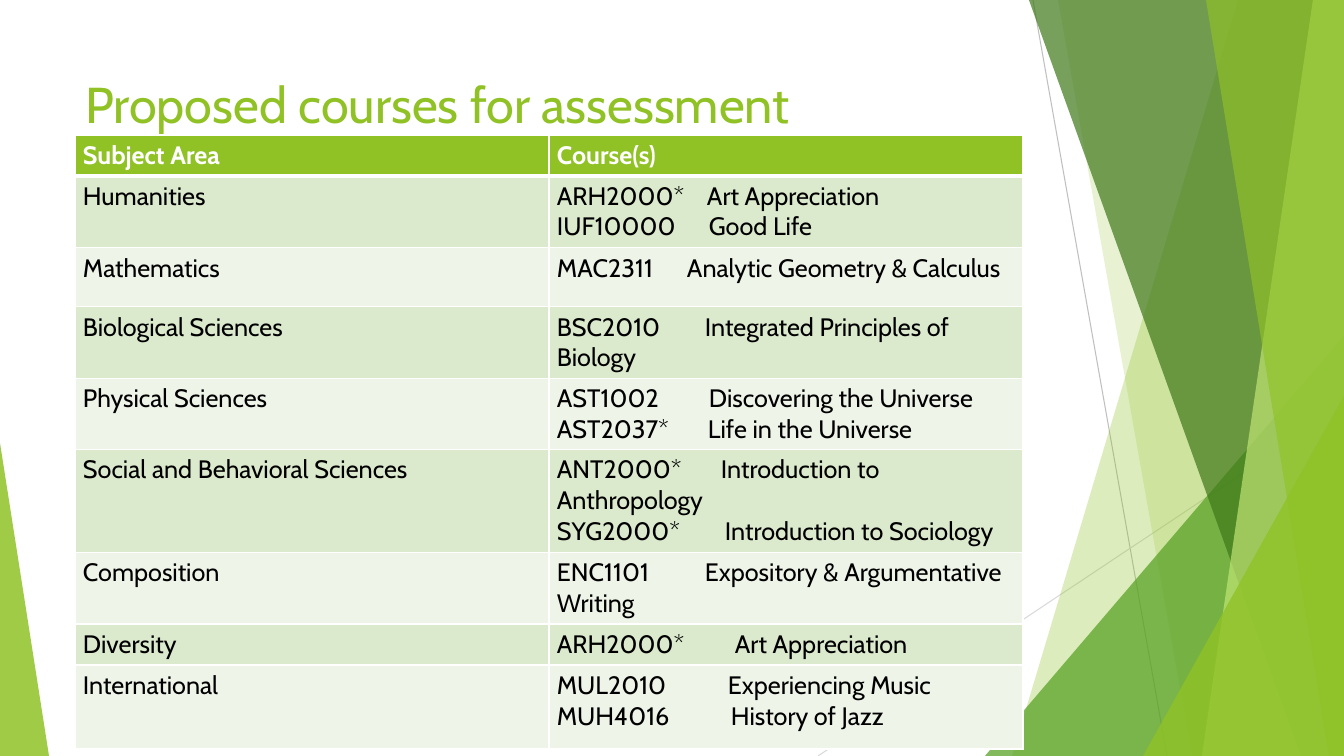
from dataclasses import dataclass

from lxml import etree
from pptx import Presentation
from pptx.dml.color import RGBColor
from pptx.enum.shapes import MSO_CONNECTOR, MSO_SHAPE
from pptx.enum.text import MSO_ANCHOR, PP_ALIGN
from pptx.oxml.ns import qn
from pptx.util import Pt

STRAIGHT = MSO_CONNECTOR.STRAIGHT
TRIANGLE = MSO_SHAPE.ISOSCELES_TRIANGLE
TOP = MSO_ANCHOR.TOP
LEFT = PP_ALIGN.LEFT

EMU_PER_PX = 914400 / 100.8
WIDTH, HEIGHT = 1344, 756
FONT = "Cabin"
GREEN, WHITE, BLACK = "90C226", "FFFFFF", "000000"
ROW_FILLS = ("DBE9CD", "EEF4E8")


@dataclass
class Ray:
    start: tuple[int, int]
    end: tuple[int, int]
    color: str


@dataclass
class Band:
    """A pane from a slanted left edge to the right side of the slide."""
    top_x: int
    bottom_x: int
    color: str
    opacity: int


@dataclass
class Wedge:
    """A right triangle standing on the bottom of the slide."""
    left: int
    top: int
    width: int
    apex: int
    color: str
    opacity: int


@dataclass
class Course:
    code: str
    name: str
    tab: int


@dataclass
class Subject:
    area: str
    courses: list[Course]
    height: int


RAYS = [
    Ray((1033, 0), (1167, HEIGHT), "BFBFBF"),
    Ray((WIDTH, 406), (818, HEIGHT), "D9D9D9"),
]
PANES = [
    Band(1238, 1012, GREEN, 30),
    Band(1058, 1192, GREEN, 20),
    Wedge(985, 336, 359, 1, "54A021", 72),
    Band(1029, 1301, "3F7819", 70),
    Band(1313, 1202, "C0E474", 70),
    Band(1206, 1329, GREEN, 65),
    Wedge(1143, 396, 201, 1, GREEN, 80),
    Wedge(0, 443, 49, 0, GREEN, 85),
]
HEADER_HEIGHT = 40
SUBJECTS = [
    Subject("Humanities", [Course("ARH2000*", "Art Appreciation", 150),
                           Course("IUF10000", "Good Life", 152)], 72),
    Subject("Mathematics", [Course("MAC2311", "Analytic Geometry & Calculus", 130)], 59),
    Subject("Biological Sciences",
            [Course("BSC2010", "Integrated Principles of Biology", 148)], 71),
    Subject("Physical Sciences", [Course("AST1002", "Discovering the Universe", 152),
                                  Course("AST2037*", "Life in the Universe", 151)], 71),
    Subject("Social and Behavioral Sciences",
            [Course("ANT2000*", "Introduction to Anthropology", 164),
             Course("SYG2000*", "Introduction to Sociology", 168)], 103),
    Subject("Composition",
            [Course("ENC1101", "Expository & Argumentative Writing", 148)], 71),
    Subject("Diversity", [Course("ARH2000*", "Art Appreciation", 178)], 41),
    Subject("International", [Course("MUL2010", "Experiencing Music", 171),
                              Course("MUH4016", "History of Jazz", 174)], 84),
]


def px(length: int) -> int:
    return round(length * EMU_PER_PX)


def rgb(color: str) -> RGBColor:
    return RGBColor.from_string(color)


def write(para, text: str, *, size: int = 18, color: str = BLACK,
          bold: bool = False, tab: int = 0) -> None:
    para.alignment = LEFT
    span = para.add_run()
    span.text = text
    span.font.name = FONT
    span.font.size = Pt(size)
    span.font.bold = bold
    span.font.color.rgb = rgb(color)
    if tab:
        stops = etree.SubElement(para._p.get_or_add_pPr(), qn("a:tabLst"))
        etree.SubElement(stops, qn("a:tab"), pos=str(px(tab)), algn="l")


def draw_ray(page, ray: Ray) -> None:
    line = page.shapes.add_connector(STRAIGHT, *map(px, ray.start + ray.end))
    line.line.color.rgb = rgb(ray.color)
    line.line.width = Pt(0.75)
    etree.SubElement(line._element.spPr, qn("a:effectLst"))


def draw_pane(page, pane: Band | Wedge) -> None:
    if isinstance(pane, Band):
        outline = page.shapes.build_freeform(pane.top_x, 0, scale=EMU_PER_PX)
        outline.add_line_segments([(WIDTH, 0), (WIDTH, HEIGHT), (pane.bottom_x, HEIGHT)])
        shape = outline.convert_to_shape()
    else:
        shape = page.shapes.add_shape(TRIANGLE, px(pane.left), px(pane.top),
                                      px(pane.width), px(HEIGHT - pane.top))
        shape.adjustments[0] = pane.apex
    shape.shadow.inherit = False
    shape.line.fill.background()
    shape.fill.solid()
    shape.fill.fore_color.rgb = rgb(pane.color)
    color = shape._element.spPr.find(".//" + qn("a:srgbClr"))
    etree.SubElement(color, qn("a:alpha"), val=str(pane.opacity * 1000))


def style_cell(cell, fill: str, top: int = 1, bottom: int = 1) -> None:
    properties = cell._tc.get_or_add_tcPr()
    for side, width in (("L", 1), ("R", 1), ("T", top), ("B", bottom)):
        border = etree.SubElement(properties, qn(f"a:ln{side}"), w=str(Pt(width)))
        paint = etree.SubElement(border, qn("a:solidFill"))
        etree.SubElement(paint, qn("a:srgbClr"), val=WHITE)
    cell.fill.solid()
    cell.fill.fore_color.rgb = rgb(fill)
    cell.margin_left = cell.margin_right = px(8)
    cell.margin_top = cell.margin_bottom = px(5)
    cell.vertical_anchor = TOP


def draw_title(page, text: str) -> None:
    title = page.shapes.title
    title.left, title.top, title.width, title.height = map(px, (75, 68, 948, 145))
    title.text_frame.vertical_anchor = TOP
    title.text_frame.word_wrap = True
    write(title.text_frame.paragraphs[0], text, size=36, color=GREEN)


def draw_courses(page) -> None:
    heights = [HEADER_HEIGHT] + [subject.height for subject in SUBJECTS]
    frame = page.shapes.add_table(len(heights), 2, px(75), px(135),
                                  px(948), px(sum(heights)))
    table = frame.table
    for row, height in zip(table.rows, heights):
        row.height = px(height)
    for column, label in enumerate(("Subject Area", "Course(s)")):
        header = table.cell(0, column)
        style_cell(header, GREEN, bottom=3)
        write(header.text_frame.paragraphs[0], label, color=WHITE, bold=True)
    for index, subject in enumerate(SUBJECTS):
        area, courses = table.rows[index + 1].cells
        for cell in (area, courses):
            style_cell(cell, ROW_FILLS[index % 2], top=1 if index else 3)
        write(area.text_frame.paragraphs[0], subject.area)
        for position, course in enumerate(subject.courses):
            box = courses.text_frame
            para = box.add_paragraph() if position else box.paragraphs[0]
            write(para, f"{course.code}\t{course.name}", tab=course.tab)


def main() -> None:
    deck = Presentation()
    deck.slide_width, deck.slide_height = px(WIDTH), px(HEIGHT)
    page = deck.slides.add_slide(deck.slide_layouts.get_by_name("Title Only"))
    for ray in RAYS:
        draw_ray(page, ray)
    for pane in PANES:
        draw_pane(page, pane)
    draw_title(page, "Proposed courses for assessment")
    draw_courses(page)
    deck.save("out.pptx")


if __name__ == "__main__":
    main()
